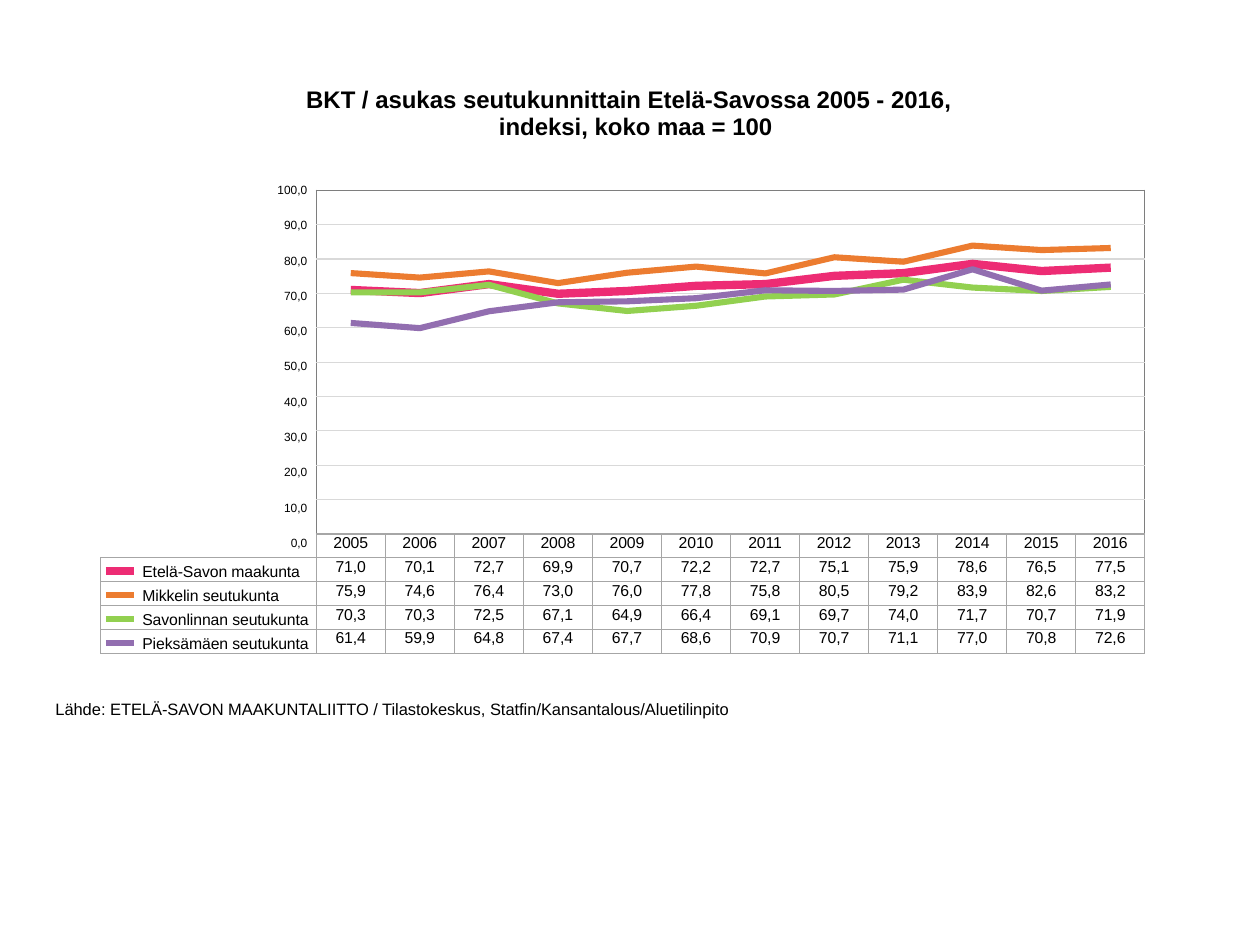
import lxml.etree
import pptx
import pptx.dml.color
import pptx.enum.shapes
import pptx.enum.text
import pptx.oxml.ns
import pptx.util

Inches = pptx.util.Inches
Pt = pptx.util.Pt
qn = pptx.oxml.ns.qn
ALIGN = pptx.enum.text.PP_ALIGN

COLORS = {
    "text": "000000", "frame": "7E7E7E", "border": "A6A6A6", "grid": "D9D9D9",
    "pink": "ED2C74", "orange": "EC7C30", "green": "92D050", "purple": "926EB0",
}
SERIES = [
    ("Etelä-Savon maakunta", "pink", 4.75,
     [71.0, 70.1, 72.7, 69.9, 70.7, 72.2, 72.7, 75.1, 75.9, 78.6, 76.5, 77.5]),
    ("Mikkelin seutukunta", "orange", 3.5,
     [75.9, 74.6, 76.4, 73.0, 76.0, 77.8, 75.8, 80.5, 79.2, 83.9, 82.6, 83.2]),
    ("Savonlinnan seutukunta", "green", 3.5,
     [70.3, 70.3, 72.5, 67.1, 64.9, 66.4, 69.1, 69.7, 74.0, 71.7, 70.7, 71.9]),
    ("Pieksämäen seutukunta", "purple", 3.5,
     [61.4, 59.9, 64.8, 67.4, 67.7, 68.6, 70.9, 70.7, 71.1, 77.0, 70.8, 72.6]),
]
YEARS = list(range(2005, 2017))
BANDS = 10
ROWS = BANDS + 1 + len(SERIES)
COLUMNS = 1 + len(YEARS)

table_left, table_top = Inches(0.8), Inches(1.51)
name_width = Inches(1.71)
year_width = Inches(6.58) // len(YEARS)
band_height = Inches(2.73) // BANDS
row_height = Inches(0.19)
plot_left = table_left + name_width
plot_bottom = table_top + BANDS * band_height


def add_span(para, text, size, bold=False, spacing=0):
    span = para.add_run()
    span.text = text
    span.font.name = "Arial"
    span.font.size = Pt(size)
    span.font.bold = bold
    span.font.color.rgb = pptx.dml.color.RGBColor.from_string(COLORS["text"])
    if spacing:
        span._r.get_or_add_rPr().set("spc", str(spacing))


def add_box(left, top, width, height):
    box = page.shapes.add_textbox(Inches(left), Inches(top), Inches(width), Inches(height))
    frame = box.text_frame
    frame.word_wrap = True
    frame.margin_left = frame.margin_right = frame.margin_top = frame.margin_bottom = 0
    return frame


deck = pptx.Presentation()
deck.slide_width, deck.slide_height = Inches(10), Inches(7.5)
page = deck.slides.add_slide(deck.slide_layouts[6])

table_height = BANDS * band_height + (ROWS - BANDS) * row_height
table = page.shapes.add_table(
    ROWS, COLUMNS, table_left, table_top,
    name_width + len(YEARS) * year_width, table_height).table
table.first_row = table.horz_banding = False
table._tbl.tblPr.find(qn("a:tableStyleId")).text = "{2D5ABB26-0587-4C30-8999-92F81FD0307C}"
for index, column in enumerate(table.columns):
    column.width = year_width if index else name_width
for index, row in enumerate(table.rows):
    row.height = band_height if index < BANDS else row_height

table.cell(0, 0).merge(table.cell(BANDS, 0))
for row in range(BANDS):
    table.cell(row, 1).merge(table.cell(row, COLUMNS - 1))

for row in range(ROWS):
    for column in range(COLUMNS):
        cell = table.cell(row, column)
        cell.margin_left = cell.margin_right = cell.margin_top = cell.margin_bottom = 0
        cell.fill.background()
        para = cell.text_frame.paragraphs[0]
        if row < BANDS or (row == BANDS and column == 0):
            lxml.etree.SubElement(para._p, qn("a:endParaRPr"), sz="900")
        elif column == 0:
            cell.margin_left = Inches(0.33)
            para.line_spacing = Pt(13)
            add_span(para, SERIES[row - BANDS - 1][0], 9, spacing=-5)
        else:
            para.alignment = ALIGN.CENTER
            if row == BANDS:
                text = str(YEARS[column - 1])
            else:
                value = SERIES[row - BANDS - 1][3][column - 1]
                text = f"{value:.1f}".replace(".", ",")
            add_span(para, text, 9, spacing=-5)

        if row > BANDS or (row == BANDS and column):
            edges = dict.fromkeys("LRTB", "border")
        elif column == 0:
            edges = {"R": "border"}
            if row in (0, BANDS):
                edges["B"] = "border"
        else:
            edges = {"T": "grid" if row else "frame",
                     "B": "grid" if row < BANDS - 1 else "border"}
            if column == 1:
                edges["L"] = "frame"
            if column in (1, COLUMNS - 1):
                edges["R"] = "frame"
        properties = cell._tc.get_or_add_tcPr()
        for position, side in enumerate(side for side in "LRTB" if side in edges):
            edge = lxml.etree.Element(qn(f"a:ln{side}"), w=str(Pt(0.75)))
            fill = lxml.etree.SubElement(edge, qn("a:solidFill"))
            lxml.etree.SubElement(fill, qn("a:srgbClr"), val=COLORS[edges[side]])
            properties.insert(position, edge)

for index, (name, color, weight, values) in enumerate(SERIES):
    key_y = Inches(4.53) + index * row_height
    key = page.shapes.add_connector(
        pptx.enum.shapes.MSO_CONNECTOR.STRAIGHT, Inches(0.84), key_y, Inches(1.06), key_y)
    key.line.color.rgb = pptx.dml.color.RGBColor.from_string(COLORS[color])
    key.line.width = Pt(4.5 if color == "pink" else weight)
    lxml.etree.SubElement(key._element.spPr, qn("a:effectLst"))

    points = [
        (plot_left + year_width * (step + 0.5),
         plot_bottom - BANDS * band_height * value / 100)
        for step, value in enumerate(values)
    ]
    builder = page.shapes.build_freeform(*points[0])
    builder.add_line_segments(points[1:], close=False)
    trend = builder.convert_to_shape()
    trend.shadow.inherit = False
    trend.fill.background()
    trend.line.color.rgb = pptx.dml.color.RGBColor.from_string(COLORS[color])
    trend.line.width = Pt(weight)

axis = add_box(2.18, 1.45, 0.26, 2.92)
for value in range(100, -1, -10):
    para = axis.paragraphs[0] if value == 100 else axis.add_paragraph()
    para.alignment = ALIGN.RIGHT
    if value < 100:
        para.space_before = Pt(12)
    add_span(para, f"{value},0", 6.8)

source = add_box(0.44, 5.55, 5.44, 0.16)
add_span(
    source.paragraphs[0],
    "Lähde: ETELÄ-SAVON MAAKUNTALIITTO / Tilastokeskus, Statfin/Kansantalous/Aluetilinpito", 9.4)

title = add_box(2.42, 0.68, 5.15, 0.45)
para = title.paragraphs[0]
para.line_spacing = Pt(15.7)
indents = para._p.get_or_add_pPr()
indents.set("marL", str(Inches(1.54)))
indents.set("indent", str(-Inches(1.53)))
add_span(para, "BKT / asukas seutukunnittain Etelä-Savossa 2005 - 2016,", 13.7, bold=True)
para.add_line_break()
add_span(para, "indeksi, koko maa = 100", 13.7, bold=True)

deck.save("out.pptx")
